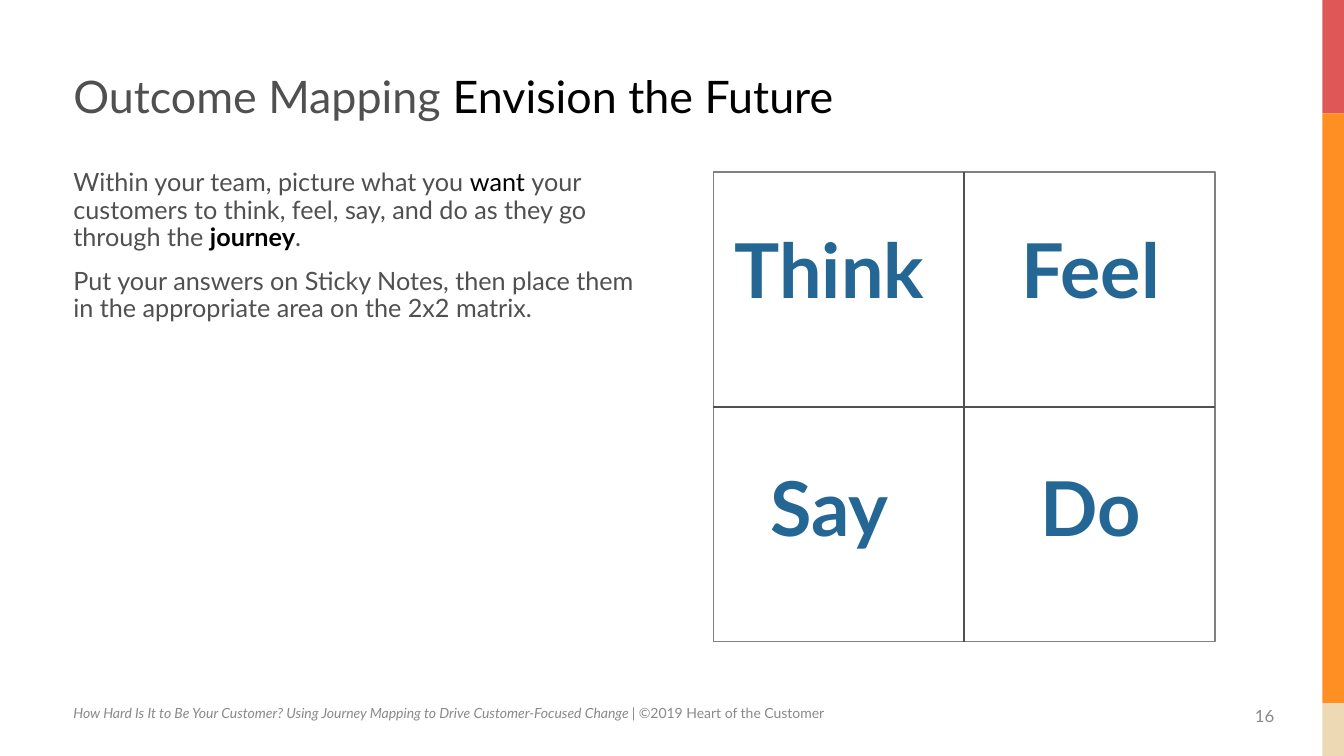
import pptx
import pptx.dml.color
import pptx.enum.shapes
import pptx.enum.text
import pptx.oxml.ns
import pptx.util
from lxml import etree

Pt = pptx.util.Pt
RGBColor = pptx.dml.color.RGBColor
PP_ALIGN = pptx.enum.text.PP_ALIGN
MSO_ANCHOR = pptx.enum.text.MSO_ANCHOR
MSO_SHAPE = pptx.enum.shapes.MSO_SHAPE

FONT = "Lato"
RED = RGBColor(0xDF, 0x57, 0x57)
ORANGE = RGBColor(0xFF, 0x8F, 0x22)
SAND = RGBColor(0xED, 0xD9, 0xB4)
BLUE = RGBColor(0x24, 0x67, 0x95)
BLACK = RGBColor(0, 0, 0)
DARK_GRAY = RGBColor(0x50, 0x50, 0x50)
MID_GRAY = RGBColor(0x80, 0x80, 0x80)
LIGHT_GRAY = RGBColor(0x89, 0x89, 0x89)

SLIDE_WIDTH, SLIDE_HEIGHT = 960, 540
MARGIN = 45.36


def add_text(slide, box, paragraphs, size, alignment=PP_ALIGN.LEFT,
             anchor=MSO_ANCHOR.TOP, line_spacing=1.0, space_before=0):
    shape = slide.shapes.add_textbox(*map(Pt, box))
    frame = shape.text_frame
    frame.word_wrap = True
    frame.vertical_anchor = anchor
    for index, pieces in enumerate(paragraphs):
        paragraph = frame.add_paragraph() if index else frame.paragraphs[0]
        paragraph.alignment = alignment
        paragraph.line_spacing = line_spacing
        paragraph.space_before = Pt(space_before if index else 0)
        for text, color, style in pieces:
            run = paragraph.add_run()
            run.text = text
            run.font.name = FONT
            run.font.size = Pt(size)
            run.font.color.rgb = color
            run.font.bold = style == "bold"
            run.font.italic = style == "italic"


def add_rectangle(slide, box):
    shape = slide.shapes.add_shape(MSO_SHAPE.RECTANGLE, *map(Pt, box))
    shape.shadow.inherit = False
    return shape


def add_side_band(slide, left, top, width, height):
    band_top = top
    for color, share in ((RED, 0.15), (ORANGE, 0.78), (SAND, 0.07)):
        band = add_rectangle(slide, (left, band_top, width, height * share))
        band.fill.solid()
        band.fill.fore_color.rgb = color
        band.line.fill.background()
        band_top += height * share


def add_footer(slide, left, top, width, height):
    book = ("How Hard Is It to Be Your Customer? "
            "Using Journey Mapping to Drive Customer-Focused Change ")
    add_text(slide, (left, top, 693.4, height),
             [[(book, LIGHT_GRAY, "italic"),
               ("| ©2019 Heart of the Customer", LIGHT_GRAY, None)]], 10)
    number_width = 29.5
    add_text(slide, (left + width - number_width, top + 0.7, number_width, height),
             [[("16", LIGHT_GRAY, None)]], 12, PP_ALIGN.CENTER)


def add_title(slide, left, top, width, height):
    add_text(slide, (left, top, width, height),
             [[("Outcome Mapping ", DARK_GRAY, None),
               ("Envision the Future", BLACK, None)]],
             32, anchor=MSO_ANCHOR.BOTTOM, line_spacing=0.9)


def add_instructions(slide, left, top, width, height):
    picture_step = [
        ("Within your team, picture what you ", DARK_GRAY, None),
        ("want ", BLACK, None),
        ("your customers to think, feel, say, and do as they go through the ",
         DARK_GRAY, None),
        ("journey", BLACK, "bold"),
        (".", DARK_GRAY, None),
    ]
    place_step = [
        ("Put your answers on Sticky Notes, then place them in the "
         "appropriate area on the 2x2 matrix.", DARK_GRAY, None),
    ]
    add_text(slide, (left, top, width, height), [picture_step, place_step],
             18, line_spacing=0.9, space_before=12)


def add_divider(slide, frame, start_site, end_site):
    divider = slide.shapes.add_connector(
        pptx.enum.shapes.MSO_CONNECTOR.STRAIGHT, 0, 0, 0, 0)
    divider.begin_connect(frame, start_site)
    divider.end_connect(frame, end_site)
    divider.line.color.rgb = DARK_GRAY
    divider.line.width = Pt(1.25)
    etree.SubElement(divider._element.spPr, pptx.oxml.ns.qn("a:effectLst"))


def add_matrix(slide, left, top, width, height):
    frame = add_rectangle(slide, (left, top, width, height))
    frame.fill.background()
    frame.line.color.rgb = MID_GRAY
    frame.line.width = Pt(1)
    add_divider(slide, frame, 0, 2)
    add_divider(slide, frame, 1, 3)
    for row, labels in enumerate((("Think", "Feel"), ("Say", "Do"))):
        for column, label in enumerate(labels):
            box = (left + 2.2 + column * 186.5, top + 32.4 + row * 170, 161.3, 72.7)
            add_text(slide, box, [[(label, BLUE, "bold")]], 54,
                     PP_ALIGN.CENTER, MSO_ANCHOR.MIDDLE)


def add_outcome_slide(presentation):
    slide = presentation.slides.add_slide(presentation.slide_layouts[6])
    add_side_band(slide, 944.6, 0, SLIDE_WIDTH - 944.6, SLIDE_HEIGHT)
    add_footer(slide, MARGIN, 499.7, 872.7, 20)
    add_title(slide, MARGIN, -0.7, 822.2, 92.2)
    add_instructions(slide, MARGIN, 118, 419, 342.7)
    add_matrix(slide, 509.6, 123, 358.3, 335.3)


def main():
    presentation = pptx.Presentation()
    presentation.slide_width = Pt(SLIDE_WIDTH)
    presentation.slide_height = Pt(SLIDE_HEIGHT)
    add_outcome_slide(presentation)
    presentation.save("out.pptx")


if __name__ == "__main__":
    main()
